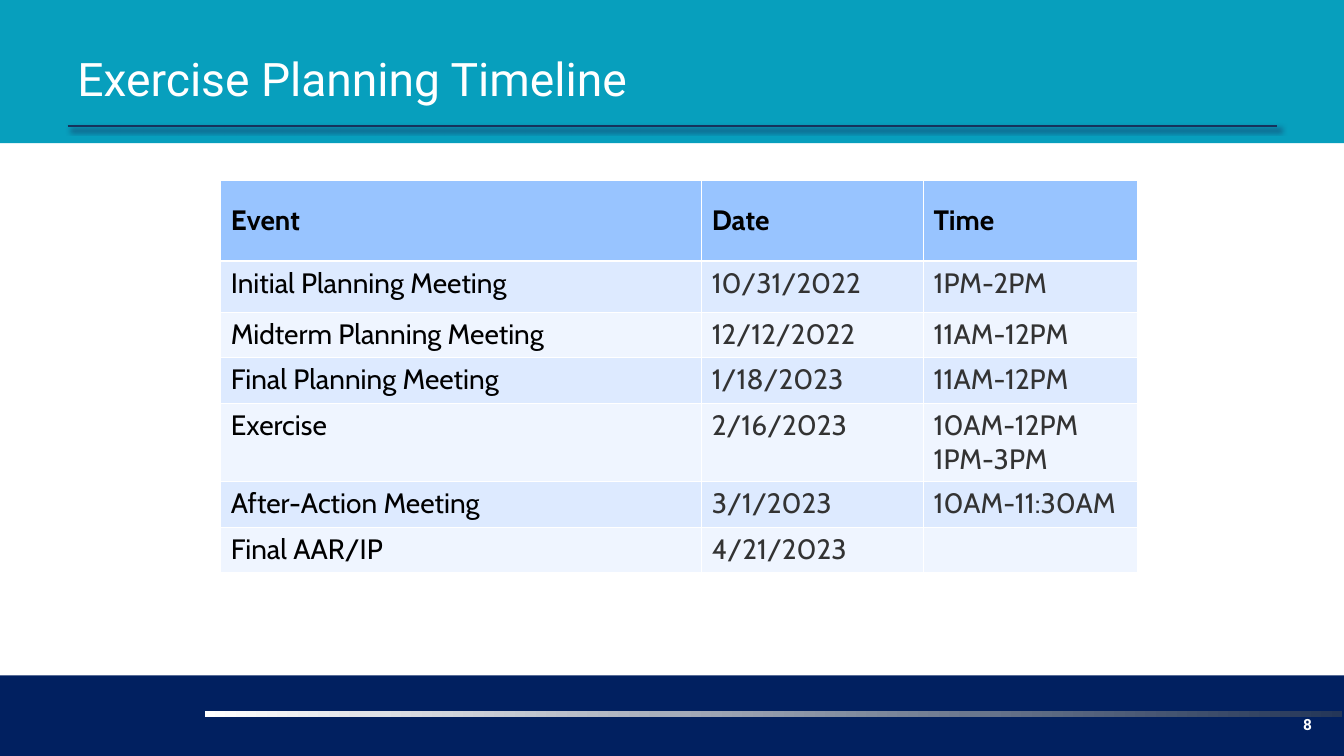
"""Builds the exercise planning timeline slide."""
from lxml import etree
from pptx import Presentation
from pptx.dml.color import RGBColor
from pptx.enum import shapes, text
from pptx.oxml import ns
from pptx.util import Inches, Pt

TITLE = "Exercise Planning Timeline"
PAGE = "8"
HEADINGS = ("Event", "Date", "Time")
EVENTS = [
    ("Initial Planning Meeting", "10/31/2022", "1PM-2PM"),
    ("Midterm Planning Meeting", "12/12/2022", "11AM-12PM"),
    ("Final Planning Meeting", "1/18/2023", "11AM-12PM"),
    ("Exercise", "2/16/2023", "10AM-12PM\n1PM-3PM"),
    ("After-Action Meeting", "3/1/2023", "10AM-11:30AM"),
    ("Final AAR/IP", "4/21/2023", ""),
]
COLUMN_WIDTHS = (4.77, 2.2, 2.12)
ROW_HEIGHTS = (0.8, 0.51, 0.45, 0.45, 0.78, 0.45, 0.45)
HEADER_FILL, BAND_FILLS = "98C4FF", ("EFF5FF", "DDEAFF")
BLACK, GREY, WHITE = "000000", "333333", "FFFFFF"


def paint(target, colour):
    target.solid()
    target.fore_color.rgb = RGBColor.from_string(colour)


def write(frame, words, size, face, colour, bold=False, align=None):
    frame.text = words
    for paragraph in frame.paragraphs:
        paragraph.alignment = align
        font = paragraph.font
        font.size, font.name, font.bold = Pt(size), face, bold
        paint(font.fill, colour)


def add_bar(slide, *box):
    bar = slide.shapes.add_shape(shapes.MSO_SHAPE.RECTANGLE, *map(Inches, box))
    bar.shadow.inherit = False
    bar.line.fill.background()
    return bar


def add_label(slide, box, anchor, *style):
    frame = slide.shapes.add_textbox(*map(Inches, box)).text_frame
    frame.word_wrap = True
    frame.vertical_anchor = anchor
    write(frame, *style)


def add_rule(slide):
    rule = slide.shapes.add_connector(
        shapes.MSO_CONNECTOR.STRAIGHT, *map(Inches, (0.67, 1.25, 12.67, 1.25)))
    rule.line.width = Pt(1.5)
    paint(rule.line.fill, "16325C")
    effects = etree.SubElement(rule._element.spPr, ns.qn("a:effectLst"))
    shadow = etree.SubElement(effects, ns.qn("a:outerShdw"), blurRad=str(Pt(4)),
                              dist=str(Pt(3)), dir=str(45 * 60000), rotWithShape="0")
    tint = etree.SubElement(shadow, ns.qn("a:srgbClr"), val="1D2B58")
    etree.SubElement(tint, ns.qn("a:alpha"), val="79000")


def add_timeline(slide):
    rows = [HEADINGS, *EVENTS]
    box = (2.19, 1.79, sum(COLUMN_WIDTHS), sum(ROW_HEIGHTS))
    timeline = slide.shapes.add_table(len(rows), len(HEADINGS), *map(Inches, box)).table
    for column, width in zip(timeline.columns, COLUMN_WIDTHS):
        column.width = Inches(width)
    for r, (row, height) in enumerate(zip(rows, ROW_HEIGHTS)):
        timeline.rows[r].height = Inches(height)
        header = r == 0
        for c, words in enumerate(row):
            cell = timeline.cell(r, c)
            paint(cell.fill, HEADER_FILL if header else BAND_FILLS[r % 2])
            if header:
                cell.vertical_anchor = text.MSO_ANCHOR.MIDDLE
            colour = BLACK if header or c == 0 else GREY
            write(cell.text_frame, words, 20, "Cabin", colour, header)


def main():
    deck = Presentation()
    deck.slide_width, deck.slide_height = Inches(13.33), Inches(7.5)
    slide = deck.slides.add_slide(deck.slide_layouts[6])
    paint(add_bar(slide, 0, 6.7, 13.33, 0.8).fill, "012060")
    paint(add_bar(slide, 0, 0, 13.33, 1.42).fill, "079FBD")
    streak = add_bar(slide, 2.03, 7.05, 11.28, 0.06).fill
    streak.gradient()
    streak.gradient_angle = 0
    for stop, colour in zip(streak.gradient_stops, (WHITE, "243658")):
        stop.color.rgb = RGBColor.from_string(colour)
    add_rule(slide)
    add_label(slide, (0.67, 0.3, 12, 0.95), text.MSO_ANCHOR.MIDDLE,
              TITLE, 33, "Roboto", WHITE)
    add_label(slide, (12.3, 7.05, 0.81, 0.3), text.MSO_ANCHOR.TOP,
              PAGE, 11, "Roboto", WHITE, True, text.PP_ALIGN.RIGHT)
    add_timeline(slide)
    deck.save("out.pptx")


if __name__ == "__main__":
    main()
